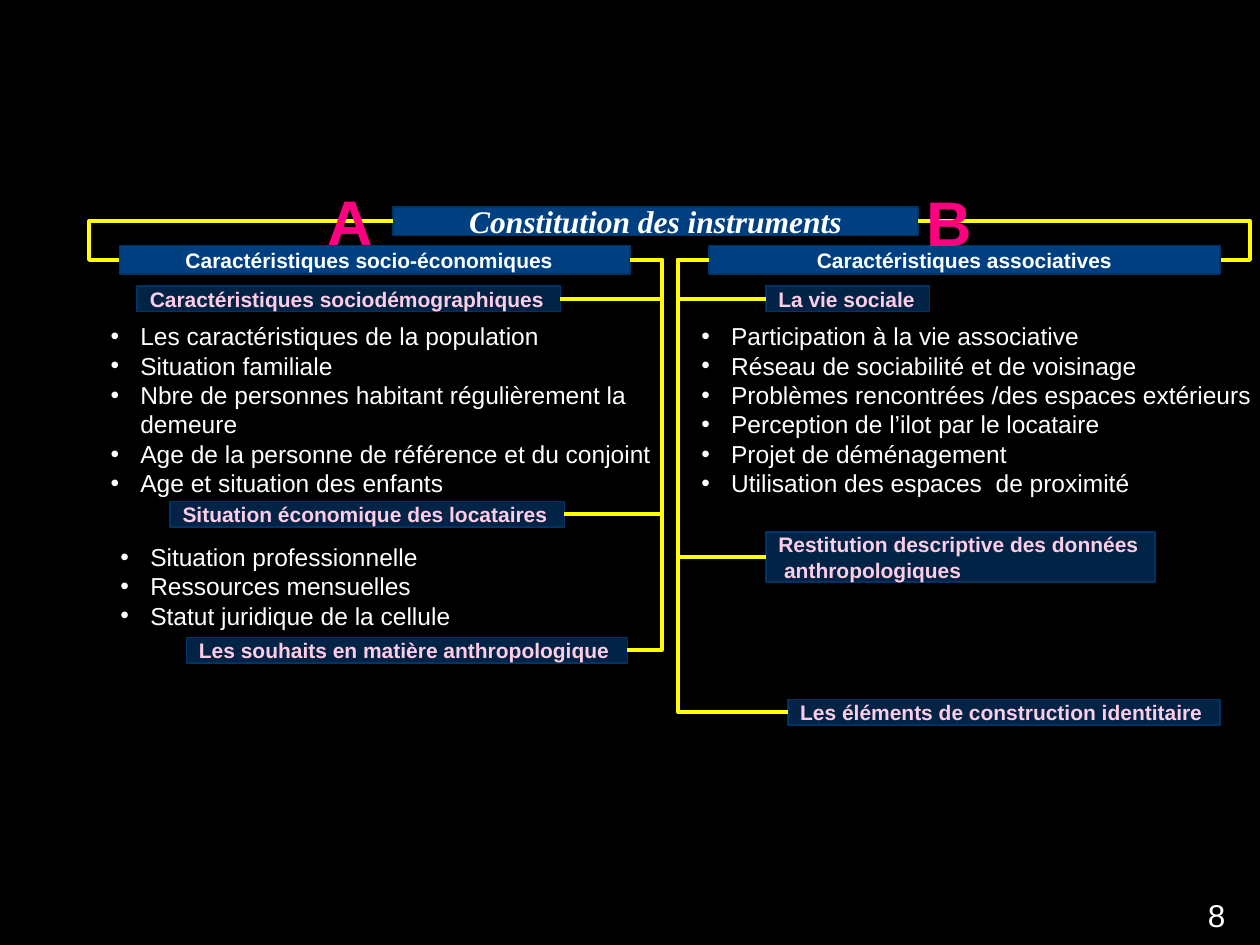
from lxml.etree import SubElement
from pptx import Presentation
from pptx.dml.color import RGBColor
from pptx.enum.shapes import MSO_CONNECTOR as Connector, MSO_SHAPE as Shape
from pptx.enum.text import MSO_ANCHOR as Anchor, PP_ALIGN as Align
from pptx.oxml.ns import qn
from pptx.util import Cm, Pt

COLORS = {"background": "000000", "box": "004080", "border": "003366", "line": "FFFF00",
          "text": "FFFFFF", "topic": "FFCCE6", "letter": "FF0080"}
LEFT_COLUMN = {
    "letter": ("A", -0.43, -1.39),
    "heading": "Caractéristiques socio-économiques",
    "inset_right": 0.47,
    "joint": 10.29,
    "trunk": 10.93,
    "topics": [
        (["Caractéristiques sociodémographiques"], 0.36, 0.82, 8.53),
        (["Situation économique des locataires"], 1.02, 5.16, 7.95),
        (["Les souhaits en matière anthropologique"], 1.35, 7.9, 8.89),
    ],
    "lists": [
        (["Les caractéristiques de la population", "Situation familiale",
          "Nbre de personnes habitant régulièrement la demeure",
          "Age de la personne de référence et du conjoint",
          "Age et situation des enfants"], -0.43, 1.4, 11.43, 2.11),
        (["Situation professionnelle", "Ressources mensuelles",
          "Statut juridique de la cellule"], -0.23, 5.85, 8.66, 1.47),
    ],
}
RIGHT_COLUMN = {
    "letter": ("B", -0.25, -1.37),
    "heading": "Caractéristiques associatives",
    "inset_right": 0.25,
    "joint": 0,
    "trunk": -0.63,
    "topics": [
        (["La vie sociale"], 1.14, 0.82, 3.3),
        (["Restitution descriptive des données", " anthropologiques"], 1.14, 5.77, 7.85),
        (["Les éléments de construction identitaire"], 1.58, 9.15, 8.71),
    ],
    "lists": [
        (["Participation à la vie associative", "Réseau de sociabilité et de voisinage",
          "Problèmes rencontrées /des espaces extérieurs",
          "Perception de l’ilot par le locataire", "Projet de déménagement",
          "Utilisation des espaces  de proximité"], -0.41, 1.4, 12.9, 2.97),
    ],
}


def color(name):
    """Return the named colour."""
    return RGBColor.from_string(COLORS[name])


def write(shape, lines, size, color_name, align=Align.LEFT, bold=False, font="Arial"):
    """Write one paragraph per line and format its runs."""
    frame = shape.text_frame
    frame.text = "\n".join(lines)
    for paragraph in frame.paragraphs:
        paragraph.alignment = align
        for run in paragraph.runs:
            run.font.name, run.font.size, run.font.bold = font, Pt(size), bold
            run.font.color.rgb = color(color_name)
    return frame


def add_box(slide, left, top, width, height, opacity=100):
    """Add a bordered blue rectangle."""
    shape = slide.shapes.add_shape(Shape.RECTANGLE, Cm(left), Cm(top), Cm(width), Cm(height))
    shape.shadow.inherit = False
    shape.fill.solid()
    shape.fill.fore_color.rgb = color("box")
    shape.line.color.rgb = color("border")
    shape.line.width = Pt(1)
    if opacity < 100:
        fill = shape.fill.fore_color and shape.element.spPr.find(qn("a:solidFill"))
        SubElement(fill[0], qn("a:alpha"), val=str(opacity * 1000))
    frame = shape.text_frame
    frame.margin_top = frame.margin_bottom = 0
    frame.vertical_anchor = Anchor.MIDDLE
    frame.word_wrap = False
    return shape


def add_text_box(slide, left, top, width, height):
    """Add an empty wrapping text box."""
    shape = slide.shapes.add_textbox(Cm(left), Cm(top), Cm(width), Cm(height))
    shape.text_frame.word_wrap = True
    return shape


def add_elbow(slide, start, via, end):
    """Add an elbow connector that turns at the horizontal position via."""
    connector = slide.shapes.add_connector(Connector.ELBOW, *map(Cm, (*start, *end)))
    connector.line.color.rgb = color("line")
    connector.line.width = Pt(2.25)
    properties = connector._element.spPr
    SubElement(properties, qn("a:effectLst"))
    bend = round((via - start[0]) / (end[0] - start[0]) * 100000)
    guides = properties.find(qn("a:prstGeom")).get_or_add_avLst()
    SubElement(guides, qn("a:gd"), name="adj1", fmla=f"val {bend}")


def add_bullets(slide, lines, left, top, width, height):
    """Add a bulleted list."""
    frame = write(add_text_box(slide, left, top, width, height), lines, 14, "text")
    for paragraph in frame.paragraphs:
        properties = paragraph._p.get_or_add_pPr()
        properties.set("marL", str(Cm(0.6)))
        properties.set("indent", str(-Cm(0.6)))
        SubElement(properties, qn("a:buFont"), typeface="Arial")
        SubElement(properties, qn("a:buChar"), char="•")
        paragraph.line_spacing = Pt(16.8)


def add_header(slide, left, top, width, height):
    """Add the title and its links to both columns."""
    title = add_box(slide, left, top, width, height)
    frame = write(title, ["Constitution des instruments"], 18, "text", Align.CENTER, True,
                  "Times New Roman")
    frame.paragraphs[0].runs[0].font.italic = True
    middle = top + height / 2
    for start, via, end in ((0, -6.12, -5.51), (width, 17.28, 16.67)):
        add_elbow(slide, (left + start, middle), left + via, (left + end, middle + 0.78))


def add_column(slide, left, top, width, height, column):
    """Add a column: heading, linked topics, lists and letter."""
    heading = add_box(slide, left, top, width, height)
    frame = write(heading, [column["heading"]], 12, "text", Align.CENTER, True)
    frame.word_wrap = True
    frame.margin_right = Cm(column["inset_right"])
    start = (left + column["joint"], top + height / 2)
    for lines, x, y, topic_width in column["topics"]:
        topic_height = 0.51 * len(lines)
        topic = add_box(slide, left + x, top + y, topic_width, topic_height, 55)
        write(topic, lines, 12, "topic", bold=True)
        edge = x + topic_width if column["joint"] else x
        end = (left + edge, top + y + topic_height / 2)
        add_elbow(slide, start, left + column["trunk"], end)
    for lines, x, y, list_width, list_height in column["lists"]:
        add_bullets(slide, lines, left + x, top + y, list_width, list_height)
    letter, x, y = column["letter"]
    frame = write(add_text_box(slide, left + x, top + y, 10.16, 1.8), [letter], 36, "letter",
                  Align.CENTER, True)
    frame.margin_left = frame.margin_right = 0


def add_page_number(slide, left, top, width, height):
    """Add the page number."""
    frame = write(add_text_box(slide, left, top, width, height), ["8"], 18, "text")
    frame.paragraphs[0].level = 1


def main():
    """Build and save the slide."""
    presentation = Presentation()
    presentation.slide_width, presentation.slide_height = Cm(25.4), Cm(19.05)
    slide = presentation.slides.add_slide(presentation.slide_layouts[6])
    slide.background.fill.solid()
    slide.background.fill.fore_color.rgb = color("background")
    add_header(slide, 7.92, 4.17, 10.59, 0.58)
    add_column(slide, 2.41, 4.95, 10.29, 0.58, LEFT_COLUMN)
    add_column(slide, 14.3, 4.95, 10.29, 0.58, RIGHT_COLUMN)
    add_page_number(slide, 22.83, 17.93, 5.92, 1.32)
    presentation.save("out.pptx")


if __name__ == "__main__":
    main()
